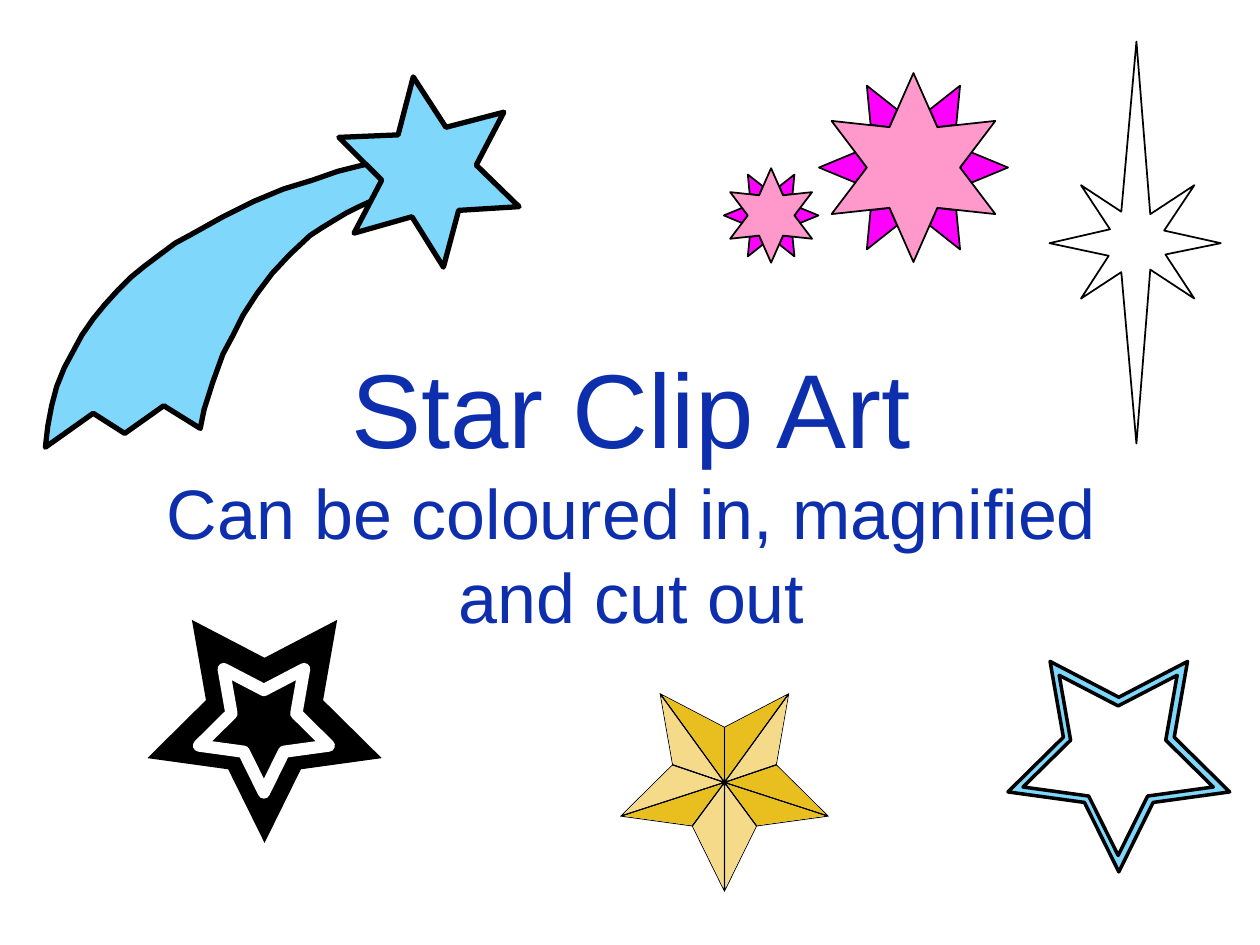
from math import cos, dist, radians, sin

from pptx import Presentation
from pptx.dml.color import RGBColor
from pptx.enum.text import MSO_ANCHOR, MSO_AUTO_SIZE, PP_ALIGN
from pptx.util import Inches, Pt

COLORS = {
    "black": "000000", "white": "FFFFFF", "sky": "7FD7FC", "navy": "0E2FAD",
    "gold": "E9BF1F", "pale gold": "F4DA89", "magenta": "FF00FF", "pink": "FF99CC",
}
TILT = 349.6
TAIL_CENTER = (1.765, 2.435)
HEAD_CENTER = (3.4, 1.365)
TAIL = [
    (3.08, 1.26), (2.97, 1.29), (2.84, 1.32), (2.68, 1.36), (2.48, 1.43),
    (2.25, 1.5), (2.01, 1.6), (1.77, 1.72), (1.52, 1.86), (1.39, 1.93),
    (1.27, 2.02), (1.15, 2.11), (1.04, 2.2), (0.93, 2.31), (0.83, 2.42),
    (0.74, 2.53), (0.65, 2.66), (0.58, 2.79), (0.51, 2.92), (0.45, 3.07),
    (0.41, 3.22), (0.38, 3.38), (0.36, 3.55), (0.74, 3.28), (0.99, 3.44),
    (1.3, 3.22), (1.59, 3.4), (1.62, 3.25), (1.69, 3.03), (1.77, 2.81),
    (1.85, 2.66), (1.93, 2.5), (2.04, 2.33), (2.16, 2.17), (2.3, 2.02),
    (2.46, 1.87), (2.55, 1.81), (2.65, 1.75), (2.75, 1.69), (2.85, 1.64),
    (2.96, 1.59), (3.08, 1.55), (3.21, 1.52),
]
HEAD = [
    (3.54, 1.01), (4, 0.89), (3.78, 1.31), (4.12, 1.64), (3.64, 1.67), (3.52, 2.12),
    (3.27, 1.72), (2.81, 1.85), (3.03, 1.43), (2.69, 1.09), (3.16, 1.07), (3.28, 0.61),
]
COMPASS = [
    (9.69, 1.93), (9.24, 1.83), (9.48, 1.47), (9.13, 1.7), (9.02, 0.33), (8.9, 1.68),
    (8.58, 1.47), (8.81, 1.82), (8.33, 1.93), (8.8, 2.03), (8.58, 2.37), (8.9, 2.16),
    (9.02, 3.52), (9.13, 2.14), (9.48, 2.37), (9.25, 2.02),
]
# Burst outlines, measured from the centre of the burst
SIDE_SPIKE = [(0.46, -0.12), (0.37, 0), (0.46, 0.12), (0.75, 0)]
CORNER_SPIKE = [(0.19, 0.32), (0.13, 0.46), (0.37, 0.65), (0.34, 0.34)]
BURST_FRONT = [
    (-0.19, -0.32), (0, -0.75), (0.19, -0.32), (0.65, -0.37), (0.37, 0), (0.65, 0.37),
    (0.19, 0.32), (0, 0.75), (-0.19, 0.32), (-0.65, 0.37), (-0.37, 0), (-0.65, -0.37),
]
GOLD_FACETS = {0, 2, 3, 6, 9}


def rgb(name):
    return RGBColor.from_string(COLORS[name])


def turn(points, center, degrees):
    """Rotate points clockwise about a centre."""
    cx, cy = center
    c, s = cos(radians(degrees)), sin(radians(degrees))
    return [(cx + (x - cx) * c - (y - cy) * s, cy + (x - cx) * s + (y - cy) * c)
            for x, y in points]


def place(points, center, sx=1, sy=1):
    return [(center[0] + x * sx, center[1] + y * sy) for x, y in points]


def five_star(left, top, width, height):
    """Star standing on one tip, clockwise from its top notch."""
    right = [(0, 0.17), (0.31, 0), (0.25, 0.36), (0.5, 0.62), (0.155, 0.67), (0, 1)]
    left_side = [(-x, y) for x, y in right[-2:0:-1]]
    return place(right + left_side, (left + width / 2, top), width, height)


def inset(triangle, factor):
    """Shrink a triangle about its incentre, so that all sides move in equally."""
    a, b, c = triangle
    weights = dist(b, c), dist(c, a), dist(a, b)
    center = [sum(w * p[i] for w, p in zip(weights, triangle)) / sum(weights)
              for i in (0, 1)]
    return [tuple(m + (v - m) * factor for v, m in zip(p, center)) for p in triangle]


class StarSlide:
    font = {"name": "Arial"}
    frame = {"word_wrap": True, "auto_size": MSO_AUTO_SIZE.NONE,
             "vertical_anchor": MSO_ANCHOR.MIDDLE}

    def __init__(self, prs):
        self.slide = prs.slides.add_slide(prs.slide_layouts[5])

    def group(self):
        return self.slide.shapes.add_group_shape().shapes

    def title(self, box, lines):
        sp = self.slide.shapes.title
        sp.left, sp.top, sp.width, sp.height = map(Inches, box)
        tf = sp.text_frame
        for key, value in self.frame.items():
            setattr(tf, key, value)
        p = tf.paragraphs[0]
        p.alignment = PP_ALIGN.CENTER
        for i, (text, size) in enumerate(lines):
            if i:
                p.add_line_break()
            r = p.add_run()
            r.text = text
            for key, value in {**self.font, "size": Pt(size)}.items():
                setattr(r.font, key, value)
            r.font.color.rgb = rgb("navy")

    def outline(self, contours, fill=None, line=None, width=1, shapes=None):
        """Draw closed contours as one shape."""
        builder = None
        for contour in contours:
            start, *rest = [(Inches(x), Inches(y)) for x, y in contour]
            if builder is None:
                builder = (shapes or self.slide.shapes).build_freeform(*start)
            else:
                builder.move_to(*start)
            builder.add_line_segments(rest, close=True)
        sp = builder.convert_to_shape()
        sp.shadow.inherit = False
        if fill:
            sp.fill.solid()
            sp.fill.fore_color.rgb = rgb(fill)
        else:
            sp.fill.background()
        if line:
            sp.line.color.rgb = rgb(line)
            sp.line.width = Pt(width)
        else:
            sp.line.fill.background()
        return sp

    def comet(self):
        g = self.group()
        for points, center in ((TAIL, TAIL_CENTER), (HEAD, HEAD_CENTER)):
            sp = self.outline([turn(points, center, -TILT)], "sky", "black", 3, g)
            sp.rotation = TILT

    def faceted_star(self, box, center):
        g = self.group()
        star = five_star(*box)
        facets = [inset((center, a, b), 0.94)
                  for a, b in zip(star, star[1:] + star[:1])]
        self.outline([star] + [f[::-1] for f in facets], "black", shapes=g)
        for i, facet in enumerate(facets):
            self.outline([facet], "gold" if i in GOLD_FACETS else "pale gold", shapes=g)

    def burst(self, center, scale):
        g = self.group()
        spikes = [(SIDE_SPIKE, sx, 1) for sx in (1, -1)]
        spikes += [(CORNER_SPIKE, sx, sy) for sx in (1, -1) for sy in (1, -1)]
        for points, sx, sy in spikes:
            self.outline([place(points, center, sx * scale, sy * scale)],
                         "magenta", "black", shapes=g)
        self.outline([place(BURST_FRONT, center, scale, scale)],
                     "pink", "black", shapes=g)


def main():
    prs = Presentation()
    prs.slide_width, prs.slide_height = Inches(10), Inches(7.5)
    s = StarSlide(prs)
    s.comet()
    s.outline([COMPASS], "white", "black")
    s.outline([five_star(8, 5.25, 1.76, 1.67), five_star(8.12, 5.36, 1.51, 1.43)[::-1]],
              "sky", "black", 2)
    s.faceted_star((4.92, 5.5, 1.66, 1.58), (5.75, 6.21))
    g = s.group()
    s.outline([five_star(1.17, 4.92, 1.86, 1.77)], "black", shapes=g)
    s.outline([five_star(1.58, 5.31, 1.03, 0.98)], line="white", width=7, shapes=g)
    s.title((0.76, 3.09, 8.5, 1.61),
            [("Star Clip Art", 60), ("Can be coloured in, magnified and cut out", 40)])
    s.burst((7.25, 1.33), 1)
    s.burst((6.12, 1.71), 0.5)
    prs.save("out.pptx")


if __name__ == "__main__":
    main()
